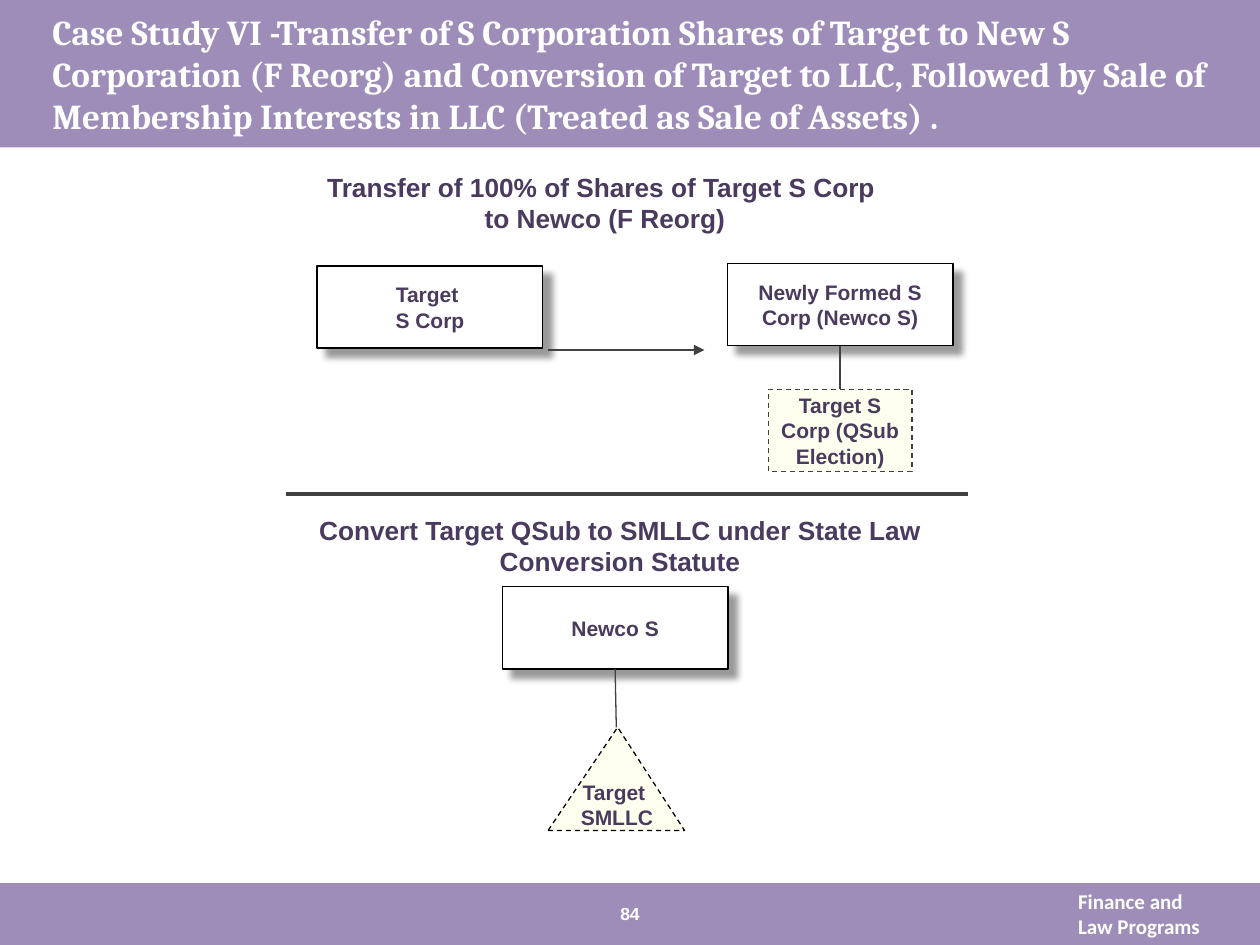
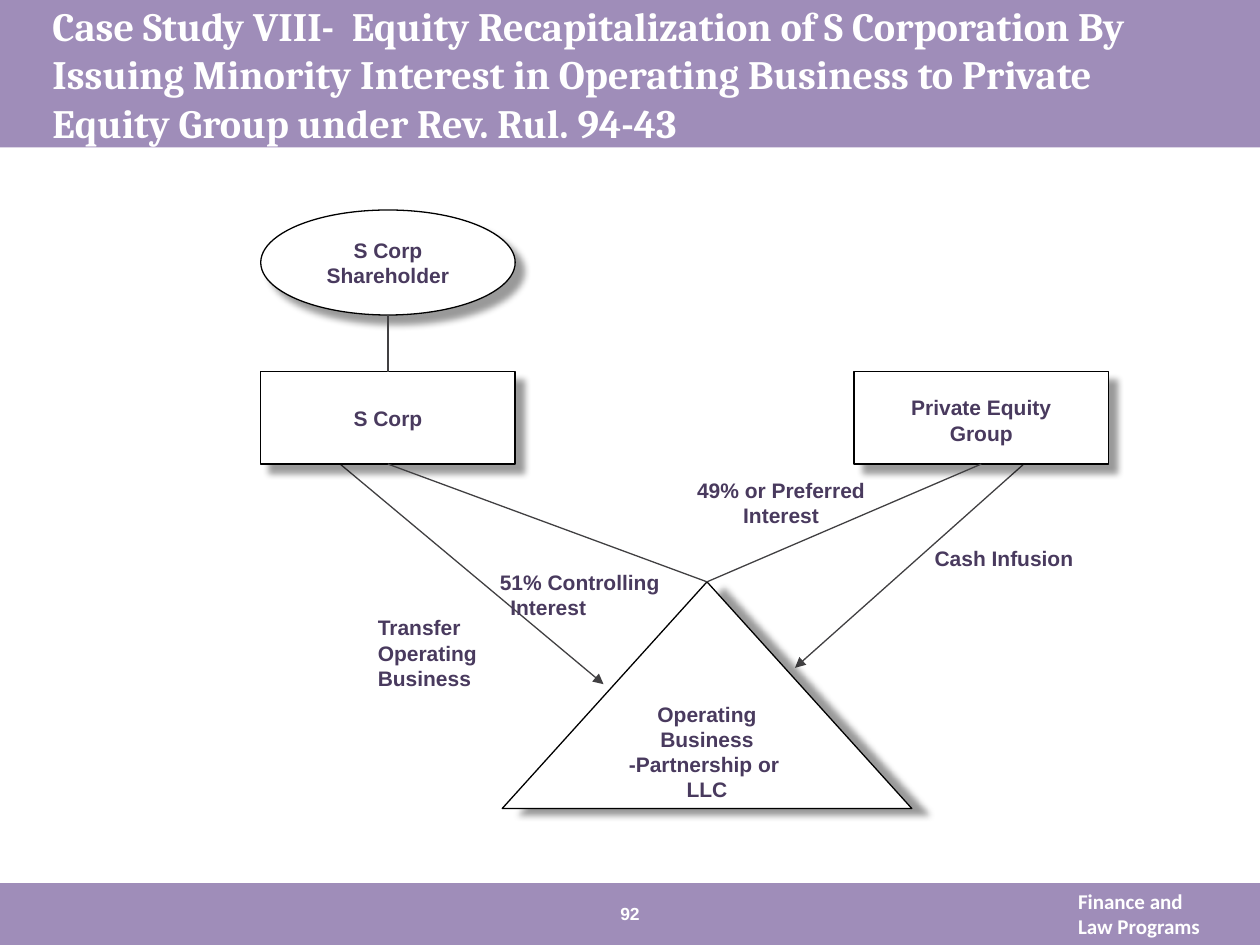
from lxml.etree import SubElement
from pptx import Presentation
from pptx.dml.color import RGBColor
from pptx.enum.dml import MSO_LINE
from pptx.enum.shapes import MSO_CONNECTOR, MSO_SHAPE
from pptx.enum.text import MSO_ANCHOR, PP_ALIGN
from pptx.oxml.ns import qn
from pptx.util import Pt

COLORS = {
    "band": "9F8DB9",
    "ink": "493A5E",
    "rule": "414042",
    "edge": "000000",
    "white": "FFFFFF",
    "cream": "FFFFEF",
}
RGB = {name: RGBColor.from_string(code) for name, code in COLORS.items()}
RECT = MSO_SHAPE.RECTANGLE
PEAK = MSO_SHAPE.ISOSCELES_TRIANGLE
TOP, MID = MSO_ANCHOR.TOP, MSO_ANCHOR.MIDDLE
LEFT, CENTER = PP_ALIGN.LEFT, PP_ALIGN.CENTER
DROP = (7, 45)


def add_item(slide, kind, at, text="", size=12, align=CENTER, anchor=MID,
             font="Arial", color="ink", fill="white", edge="edge",
             dash=False, shadow=None, inset=None):
    place = [Pt(v) for v in at]
    if kind is None:
        item = slide.shapes.add_textbox(*place)
    else:
        item = slide.shapes.add_shape(kind, *place)
        item.shadow.inherit = False
        item.fill.solid()
        item.fill.fore_color.rgb = RGB[fill]
        if edge:
            item.line.color.rgb = RGB[edge]
            item.line.width = Pt(0.75)
        else:
            item.line.fill.background()
        if dash:
            item.line.dash_style = MSO_LINE.DASH
        if shadow:
            dist, angle = shadow
            effects = item._element.spPr.find(qn("a:effectLst"))
            outer = SubElement(effects, qn("a:outerShdw"), blurRad=str(Pt(4)),
                               dist=str(Pt(dist)), dir=str(angle * 60000),
                               algn="tl", rotWithShape="0")
            tint = SubElement(outer, qn("a:srgbClr"), val=COLORS["edge"])
            SubElement(tint, qn("a:alpha"), val="40000")
    frame = item.text_frame
    frame.word_wrap = True
    frame.vertical_anchor = anchor
    if inset is not None:
        frame.margin_left = frame.margin_right = Pt(inset)
        frame.margin_top = frame.margin_bottom = Pt(inset)
    if text:
        frame.text = text
        for para in frame.paragraphs:
            para.alignment = align
            for run in para.runs:
                run.font.size = Pt(size)
                run.font.name = font
                run.font.bold = True
                run.font.color.rgb = RGB[color]
    return item


def add_line(slide, ends, width=0.75, arrow=False, start=None, stop=None):
    line = slide.shapes.add_connector(MSO_CONNECTOR.STRAIGHT, *[Pt(v) for v in ends])
    if start:
        line.begin_connect(start, 2)
    if stop:
        line.end_connect(stop, 0)
    line.line.color.rgb = RGB["rule"]
    line.line.width = Pt(width)
    props = line._element.spPr
    if arrow:
        SubElement(props.find(qn("a:ln")), qn("a:tailEnd"), type="triangle")
    SubElement(props, qn("a:effectLst"))


prs = Presentation()
prs.slide_width, prs.slide_height = Pt(720), Pt(540)

heads = [
    ("Case Study VI -Transfer of S Corporation Shares of Target to New S Corporation "
     "(F Reorg) and Conversion of Target to LLC, Followed by Sale of Membership "
     "Interests in LLC (Treated as Sale of Assets) .", 20, 669.6, "84"),
    ("Case Study VIII-  Equity Recapitalization of S Corporation By Issuing Minority "
     "Interest in Operating Business to Private Equity Group under Rev. Rul. 94-43",
     23, 660.2, "92"),
]
for title, size, width, number in heads:
    slide = prs.slides.add_slide(prs.slide_layouts[6])
    for top, height in [(0, 84.3), (504.6, 35.4)]:
        add_item(slide, RECT, (0, top, 720, height), fill="band", edge=None)
    add_item(slide, None, (609, 504, 105, 36), "Finance and \vLaw Programs",
             align=LEFT, anchor=TOP, font="Calibri", color="white")
    add_item(slide, None, (30, 0, width, 84.3), title, size, LEFT,
             font="Cambria", color="white", inset=0)
    add_item(slide, None, (324, 516, 72, 12.5), number, 10, color="white")

reorg, recap = prs.slides

for top, width, text in [
    (94.3, 364.3, "Transfer of 100% of Shares of Target S Corp \vto Newco (F Reorg)"),
    (290.2, 381.6, "Convert Target QSub to SMLLC under State Law Conversion Statute"),
]:
    add_item(reorg, None, (163.5, top, width, 44), text, 15, anchor=TOP)

firms = [
    add_item(reorg, RECT, (left, top, 129, 47), text, shadow=DROP)
    for left, top, text in [
        (181.2, 152, "Target \nS Corp"),
        (415.6, 150.5, "Newly Formed S Corp (Newco S)"),
        (287, 335.3, "Newco S"),
    ]
]
qsub = add_item(reorg, RECT, (439.1, 222.5, 82, 47), "Target S Corp (QSub Election)",
                fill="cream", edge="rule", dash=True)
smllc = add_item(reorg, PEAK, (313.2, 415.6, 78, 59), "Target \nSMLLC",
                 fill="cream", dash=True)
smllc.adjustments[0] = 0.51
smllc.text_frame.word_wrap = False

add_line(reorg, (163.5, 282.3, 553, 282.3), 2.25)
add_line(reorg, (313.2, 200, 402.5, 200), arrow=True)
add_line(reorg, (480, 198, 480, 222), start=firms[1], stop=qsub)
add_line(reorg, (351, 382, 351, 416), start=firms[2], stop=smllc)

for ends in [(587.5, 263, 454.3, 381.6), (187.2, 259.2, 344.9, 391)]:
    add_line(recap, ends, arrow=True)

add_item(recap, MSO_SHAPE.OVAL, (149, 120, 145.4, 60), "S Corp Shareholder", shadow=DROP)
corp, fund = [
    add_item(recap, RECT, (left, 212.4, 145.4, 52.8), text, shadow=DROP)
    for left, text in [(149, "S Corp"), (488, "Private Equity\vGroup")]
]
fund.text_frame.margin_top = Pt(6)
firm = add_item(recap, PEAK, (287, 332.5, 234, 129.5),
                "Operating Business -Partnership or  LLC", anchor=TOP, shadow=(10, 20))

add_line(recap, (221.7, 180, 221.7, 212.4), stop=corp)
for owner in (corp, fund):
    add_line(recap, (0, 0, 10, 10), start=owner, stop=firm)

labels = [
    add_item(recap, None, at, text, align=align, anchor=TOP)
    for at, text, align in [
        ((278.5, 321.8, 110, 42), "51% Controlling\nInterest", LEFT),
        ((386.6, 269.3, 119.5, 34), "49% or Preferred\nInterest", CENTER),
        ((527, 308.2, 133, 27), "Cash Infusion", LEFT),
        ((208.8, 347.8, 96, 48), "Transfer\nOperating\nBusiness", LEFT),
    ]
]
share = labels[0].text_frame.paragraphs[1]
share._p.get_or_add_pPr().set("marL", str(Pt(6)))

prs.save("out.pptx")
